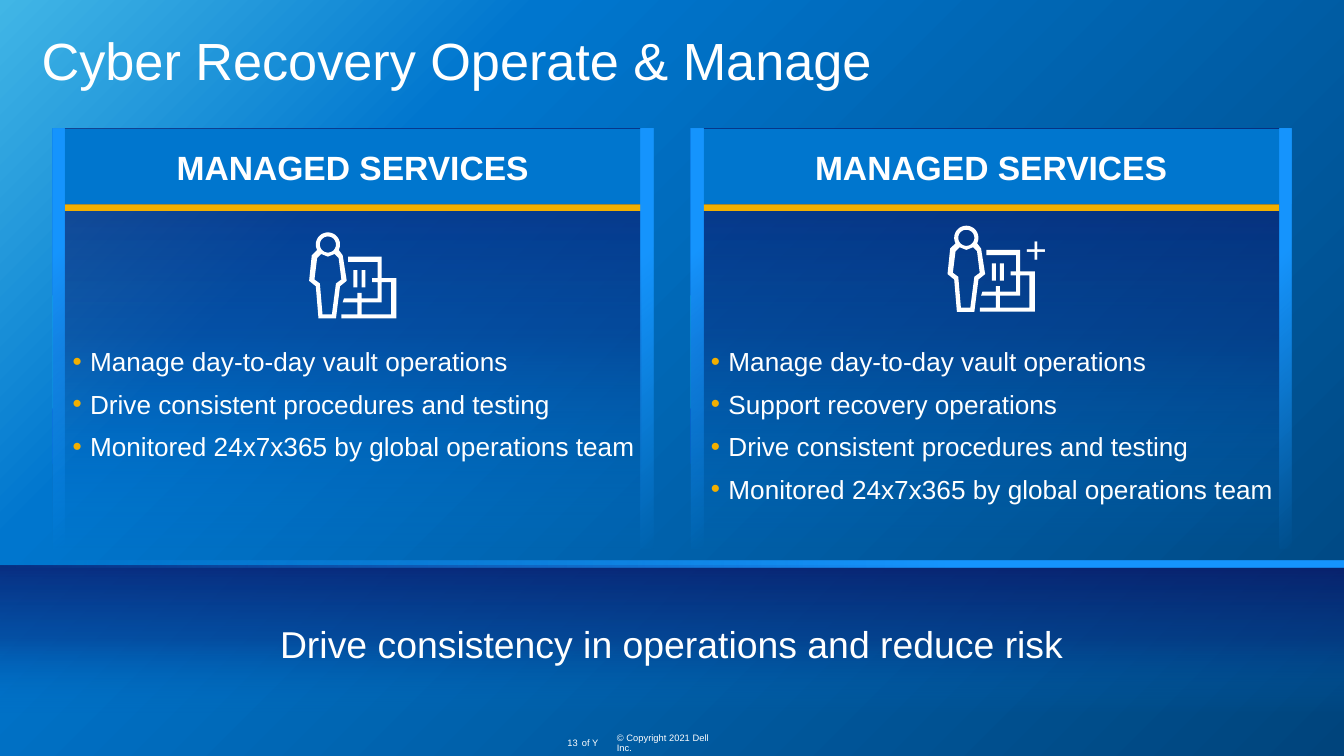
from dataclasses import dataclass
from math import cos, radians, sin
from typing import Optional

from lxml.etree import SubElement
from pptx import Presentation
from pptx.dml.color import RGBColor
from pptx.enum.shapes import MSO_SHAPE
from pptx.enum.text import MSO_ANCHOR, MSO_AUTO_SIZE, PP_ALIGN
from pptx.oxml.ns import qn
from pptx.util import Inches, Pt

WHITE = RGBColor(0xFF, 0xFF, 0xFF)
ORANGE = RGBColor(0xF2, 0xAF, 0x00)
HEADER_BLUE = RGBColor(0x00, 0x76, 0xCE)
SKY = RGBColor(0x41, 0xB6, 0xE6)
DEEP_BLUE = RGBColor(0x00, 0x44, 0x7C)
BRIGHT_BLUE = RGBColor(0x17, 0x96, 0xFF)
PANEL_BLUE = RGBColor(0x00, 0x75, 0xCD)
NAVY = RGBColor(0x08, 0x2F, 0x82)
MIDNIGHT = RGBColor(0x0B, 0x10, 0x62)
FONT = "Arial"

SLIDE_WIDTH = 10
SLIDE_HEIGHT = SLIDE_WIDTH * 9 / 16
CARD_TOP, CARD_WIDTH, CARD_HEIGHT = 0.96, 4.47, 3.12
RAIL_WIDTH, HEADER_HEIGHT, RULE_HEIGHT = 0.09, 0.56, 0.05

Point = tuple[float, float]


@dataclass(frozen=True)
class Stop:
    position: int
    color: RGBColor
    opacity: int = 100


@dataclass(frozen=True)
class Card:
    left: float
    heading: str
    items: tuple[str, ...]
    icon_left: float
    icon_top: float
    badge: str = ""


BACKGROUND = (Stop(0, SKY), Stop(26, HEADER_BLUE), Stop(100, DEEP_BLUE))
PANEL_FADE = (Stop(0, MIDNIGHT, 70), Stop(50, NAVY, 50), Stop(100, PANEL_BLUE, 0))
RAIL_FADE = (Stop(29, BRIGHT_BLUE), Stop(100, BRIGHT_BLUE, 0))

DAILY = "Manage day-to-day vault operations"
TESTING = "Drive consistent procedures and testing"
MONITORING = "Monitored 24x7x365 by global operations team"
CARDS = (
    Card(0.39, "MANAGED SERVICES", (DAILY, TESTING, MONITORING), 2.3, 1.73),
    Card(5.14, "MANAGED SERVICES",
         (DAILY, "Support recovery operations", TESTING, MONITORING), 7.05, 1.68, "+"),
)


def arc(radius: float, start: int, end: int) -> list[Point]:
    """Points around the centre of the icon's head."""
    steps = 36
    angles = [radians(start + (end - start) * step / steps) for step in range(steps + 1)]
    return [(0.14 + radius * cos(angle), 0.09 + radius * sin(angle)) for angle in angles]


# Icon outlines, measured from the icon's top left corner
PERSON = (
    [(0.25, 0.17), *arc(0.09, 27, -207), (0.02, 0.17), (0, 0.36), (0.05, 0.4),
     (0.07, 0.64), (0.2, 0.64), (0.23, 0.4), (0.28, 0.36)],
    arc(0.06, 0, 360),
    [(0.2, 0.38), (0.17, 0.61), (0.1, 0.61), (0.08, 0.38), (0.04, 0.35), (0.06, 0.19),
     (0.09, 0.16), (0.14, 0.18), (0.19, 0.16), (0.22, 0.19), (0.24, 0.35)],
)
BUILDINGS = (
    [(0.54, 0.34), (0.54, 0.18), (0.29, 0.18), (0.29, 0.22), (0.51, 0.22), (0.51, 0.34),
     (0.47, 0.34), (0.47, 0.37), (0.51, 0.37), (0.51, 0.49), (0.39, 0.49), (0.39, 0.45),
     (0.36, 0.45), (0.36, 0.49), (0.26, 0.49), (0.25, 0.52), (0.36, 0.52), (0.36, 0.61),
     (0.24, 0.61), (0.24, 0.64), (0.65, 0.64), (0.65, 0.34)],
    [(0.61, 0.61), (0.39, 0.61), (0.39, 0.52), (0.54, 0.52), (0.54, 0.37), (0.61, 0.37)],
)
WINDOWS = (0.33, 0.39)


def fill_gradient(target, stops: tuple[Stop, ...], angle: int) -> None:
    """Fill a shape or slide background, with the angle running clockwise."""
    owner = target if hasattr(target, "fill") else target.background
    owner.fill.gradient()
    owner.fill.gradient_angle = 360 - angle
    stop_list = target.element.find(".//" + qn("a:gsLst"))
    for old_stop in list(stop_list):
        stop_list.remove(old_stop)
    for stop in stops:
        node = SubElement(stop_list, qn("a:gs"), pos=str(stop.position * 1000))
        color = SubElement(node, qn("a:srgbClr"), val=str(stop.color))
        if stop.opacity < 100:
            SubElement(color, qn("a:alpha"), val=str(stop.opacity * 1000))


def add_box(slide, left: float, top: float, width: float, height: float,
            color: Optional[RGBColor] = None):
    shape = slide.shapes.add_shape(MSO_SHAPE.RECTANGLE, Inches(left), Inches(top),
                                   Inches(width), Inches(height))
    shape.shadow.inherit = False
    shape.line.fill.background()
    if color is None:
        shape.fill.background()
    else:
        shape.fill.solid()
        shape.fill.fore_color.rgb = color
    return shape


def write_text(shape, text: str, size: float, align=PP_ALIGN.LEFT, anchor=MSO_ANCHOR.TOP,
               wrap: bool = True, bold: bool = False, line_spacing: float = 1.0) -> None:
    frame = shape.text_frame
    frame.text = text
    frame.word_wrap = wrap
    frame.auto_size = MSO_AUTO_SIZE.NONE
    frame.vertical_anchor = anchor
    frame.margin_left = frame.margin_right = frame.margin_top = frame.margin_bottom = 0
    for paragraph in frame.paragraphs:
        paragraph.alignment = align
        paragraph.line_spacing = line_spacing
        paragraph.space_before = Pt(0)
        for run in paragraph.runs:
            run.font.name, run.font.size, run.font.bold = FONT, Pt(size), bold
            run.font.color.rgb = WHITE


def add_label(slide, left: float, top: float, width: float, height: float, text: str,
              size: float, **style) -> None:
    label = slide.shapes.add_textbox(Inches(left), Inches(top), Inches(width), Inches(height))
    write_text(label, text, size, **style)


def place(placeholder, left: float, top: float, width: float, height: float) -> None:
    """Position a placeholder and bring it to the front."""
    placeholder.left, placeholder.top = Inches(left), Inches(top)
    placeholder.width, placeholder.height = Inches(width), Inches(height)
    placeholder.element.getparent().append(placeholder.element)


def write_list(placeholder, items: tuple[str, ...]) -> None:
    write_text(placeholder, "\n".join(items), 14)
    for index, paragraph in enumerate(placeholder.text_frame.paragraphs):
        paragraph.space_before = Pt(6 if index else 0)
        properties = paragraph._p.get_or_add_pPr()
        properties.set("marL", str(Inches(0.19)))
        properties.set("indent", str(Inches(-0.13)))
        color = SubElement(properties, qn("a:buClr"))
        SubElement(color, qn("a:srgbClr"), val=str(ORANGE))
        SubElement(properties, qn("a:buFont"), typeface=FONT)
        SubElement(properties, qn("a:buChar"), char="•")


def add_outline(slide, contours: tuple[list[Point], ...], left: float, top: float) -> None:
    placed = [[(Inches(left + x), Inches(top + y)) for x, y in contour] for contour in contours]
    builder = slide.shapes.build_freeform(*placed[0][0])
    builder.add_line_segments(placed[0][1:], close=True)
    for hole in placed[1:]:
        builder.move_to(*hole[0])
        builder.add_line_segments(hole[1:], close=True)
    shape = builder.convert_to_shape()
    shape.shadow.inherit = False
    shape.fill.solid()
    shape.fill.fore_color.rgb = WHITE
    shape.line.fill.background()


def draw_card(slide, card: Card, list_placeholder) -> None:
    inner_left, inner_width = card.left + RAIL_WIDTH, CARD_WIDTH - 2 * RAIL_WIDTH
    # Panel, heading and frame
    panel = add_box(slide, card.left, CARD_TOP, CARD_WIDTH - RAIL_WIDTH, CARD_HEIGHT)
    fill_gradient(panel, PANEL_FADE, 90)
    header = add_box(slide, card.left, CARD_TOP, CARD_WIDTH, HEADER_HEIGHT, HEADER_BLUE)
    write_text(header, card.heading, 18, PP_ALIGN.CENTER, MSO_ANCHOR.MIDDLE, bold=True)
    add_box(slide, inner_left, CARD_TOP + HEADER_HEIGHT, inner_width, RULE_HEIGHT, ORANGE)
    for rail_left in (card.left, card.left + CARD_WIDTH - RAIL_WIDTH):
        rail = add_box(slide, rail_left, CARD_TOP, RAIL_WIDTH, CARD_HEIGHT)
        fill_gradient(rail, RAIL_FADE, 45)
    # Icon
    add_outline(slide, BUILDINGS, card.icon_left, card.icon_top)
    for offset in WINDOWS:
        add_box(slide, card.icon_left + offset, card.icon_top + 0.28, 0.03, 0.13, WHITE)
    add_outline(slide, PERSON, card.icon_left, card.icon_top)
    if card.badge:
        add_label(slide, card.icon_left + 0.58, card.icon_top, 0.16, 0.34, card.badge, 20,
                  align=PP_ALIGN.CENTER, wrap=False)
    # List
    place(list_placeholder, inner_left, 2.57, inner_width, 0.3 * len(card.items))
    write_list(list_placeholder, card.items)


def main() -> None:
    presentation = Presentation()
    presentation.slide_width = Inches(SLIDE_WIDTH)
    presentation.slide_height = Inches(SLIDE_HEIGHT)
    slide = presentation.slides.add_slide(presentation.slide_layouts.get_by_name("Two Content"))
    fill_gradient(slide, BACKGROUND, 45)
    title, *lists = list(slide.placeholders)

    # Title and cards
    place(title, 0.31, 0.26, 9.38, 0.42)
    write_text(title, "Cyber Recovery Operate & Manage", 28, line_spacing=0.9)
    for card, list_placeholder in zip(CARDS, lists):
        draw_card(slide, card, list_placeholder)

    # Closing band
    fill_gradient(add_box(slide, 0, 4.21, SLIDE_WIDTH, 1.09), PANEL_FADE, 90)
    closing = add_box(slide, 0, 4.22, SLIDE_WIDTH, 1.14)
    write_text(closing, "Drive consistency in operations and reduce risk", 20,
               PP_ALIGN.CENTER, MSO_ANCHOR.MIDDLE)
    fill_gradient(add_box(slide, 0, 4.17, SLIDE_WIDTH, RULE_HEIGHT), RAIL_FADE, 180)

    # Footer
    footer = {"anchor": MSO_ANCHOR.MIDDLE, "line_spacing": 0.9}
    add_label(slide, 4.22, 5.49, 0.08, 0.08, "13", 5, align=PP_ALIGN.RIGHT, wrap=False, **footer)
    add_label(slide, 4.33, 5.49, 0.12, 0.08, "of Y", 5, wrap=False, **footer)
    add_label(slide, 4.59, 5.49, 0.81, 0.08, "© Copyright 2021 Dell Inc.", 5, **footer)
    presentation.save("out.pptx")


if __name__ == "__main__":
    main()
